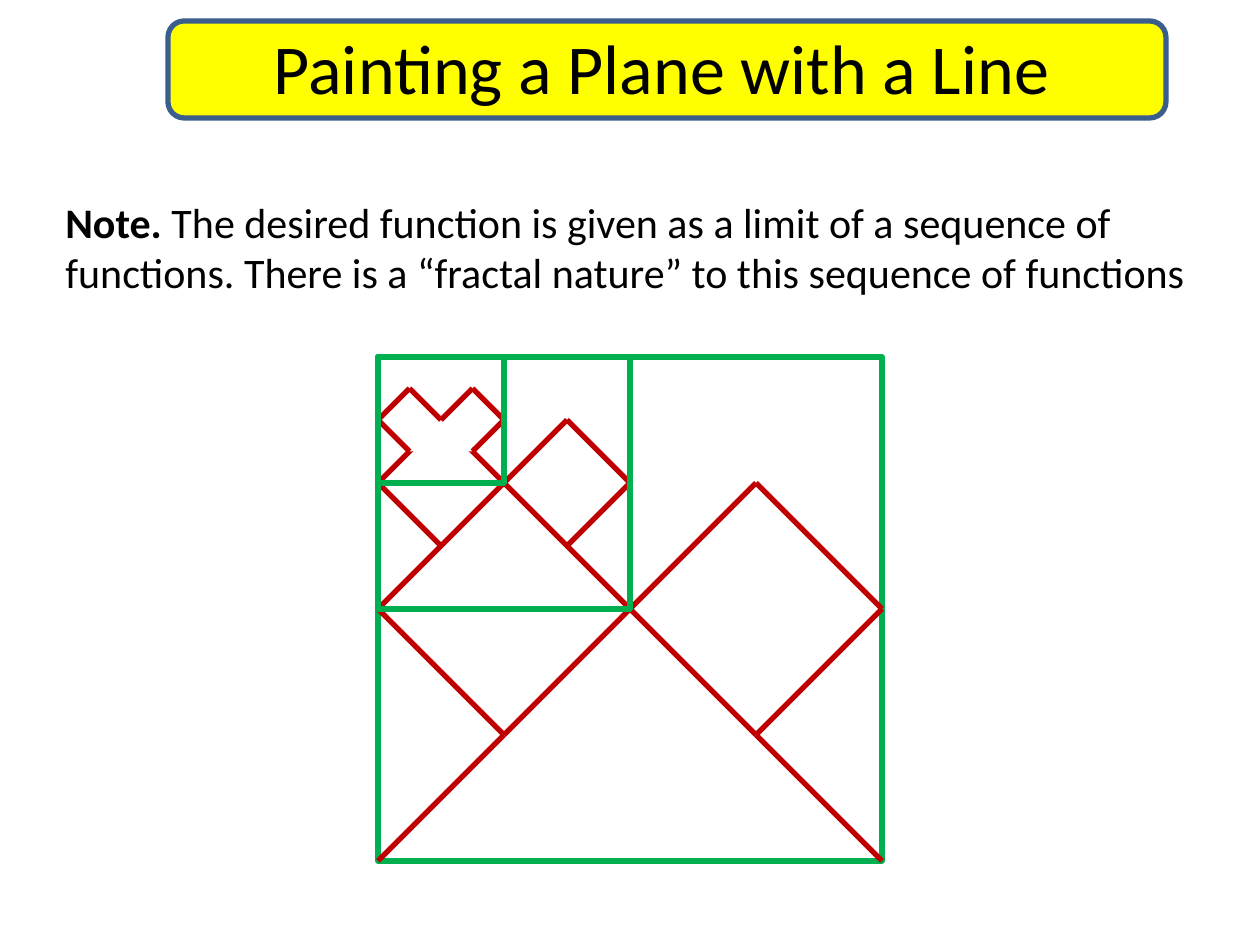
"""Build the slide on painting a plane with a line, with three nested curve levels."""
import pptx
import pptx.dml.color
import pptx.enum.shapes
import pptx.enum.text
import pptx.util
import lxml.etree

TITLE = [("Painting a Plane with a Line", False)]
NOTE = [
    ("Note. ", True),
    ("The desired function is given as a limit of a sequence of functions. "
     "There is a “fractal nature” to this sequence of functions", False),
]
CURVE = [
    ((0, 2), (1, 3)), ((0, 2), (1, 1)), ((1, 1), (2, 2)),
    ((2, 2), (3, 1)), ((3, 1), (4, 2)), ((4, 2), (3, 3)),
]
LEGS = [((0, 4), (1, 3)), ((1, 3), (2, 2)), ((2, 2), (3, 3)), ((3, 3), (4, 4))]
LEVELS = [(504, LEGS + CURVE), (252, CURVE), (126, CURVE)]
SIDE_SITES = {(0, 2): 1, (4, 2): 3}

SLIDE_SIZE = (1260, 945)
CORNER = (378, 357)
BANNER_BOX = (168, 21, 998, 97)
TITLE_BOX = (168, 18, 987, 97)
NOTE_BOX = (53, 190, 1197, 115)
THEME = {
    "font": "Calibri", "title_size": 40, "note_size": 24, "line_width": 3,
    "text": "000000", "square": "00B050", "curve": "C00000",
    "banner": "FFFF00", "banner_line": "3A5F8C", "cover": "FFFFFF",
}
SHAPES = pptx.enum.shapes.MSO_SHAPE
ALIGN = pptx.enum.text.PP_ALIGN


def px(value):
    return pptx.util.Emu(round(value * 914400 / 126))


def color(name):
    return pptx.dml.color.RGBColor.from_string(THEME[name])


def style_line(line, name):
    line.color.rgb = color(name)
    line.width = pptx.util.Pt(THEME["line_width"])


def add_box(slide, kind, box, fill=None, line=None):
    shape = slide.shapes.add_shape(kind, *map(px, box))
    shape.shadow.inherit = False
    if fill:
        shape.fill.solid()
        shape.fill.fore_color.rgb = color(fill)
    else:
        shape.fill.background()
    if line:
        style_line(shape.line, line)
    else:
        shape.line.fill.background()
    return shape


def write_text(shape, runs, box, size, align=ALIGN.LEFT, anchor=pptx.enum.text.MSO_ANCHOR.TOP):
    shape.left, shape.top, shape.width, shape.height = map(px, box)
    frame = shape.text_frame
    frame.word_wrap = True
    frame.auto_size = pptx.enum.text.MSO_AUTO_SIZE.NONE
    frame.vertical_anchor = anchor
    paragraph = frame.paragraphs[0]
    paragraph.alignment = align
    for text, bold in runs:
        run = paragraph.add_run()
        run.text = text
        run.font.name = THEME["font"]
        run.font.size = pptx.util.Pt(THEME[size])
        run.font.bold = bold
        run.font.color.rgb = color("text")


def add_segment(slide, square, unit, start, end):
    points = [px(CORNER[axis] + unit * point[axis]) for point in (start, end) for axis in (0, 1)]
    connector = slide.shapes.add_connector(pptx.enum.shapes.MSO_CONNECTOR.STRAIGHT, *points)
    style_line(connector.line, "curve")
    properties = connector.element.spPr
    lxml.etree.SubElement(properties, pptx.oxml.ns.qn("a:effectLst"))
    if start in SIDE_SITES:
        connector.begin_connect(square, SIDE_SITES[start])
    if end in SIDE_SITES:
        connector.end_connect(square, SIDE_SITES[end])


def add_level(slide, side, segments):
    square = add_box(slide, SHAPES.RECTANGLE, (*CORNER, side, side), line="square")
    for start, end in segments:
        add_segment(slide, square, side / 4, start, end)
    return square


def main():
    presentation = pptx.Presentation()
    presentation.slide_width, presentation.slide_height = map(px, SLIDE_SIZE)
    slide = presentation.slides.add_slide(presentation.slide_layouts[5])
    tree = slide.shapes.element

    outer, middle, inner = LEVELS
    add_level(slide, *outer)
    tree.append(add_level(slide, *middle).element)
    unit = inner[0] / 4
    cover_box = (CORNER[0] + unit, CORNER[1] + unit * 5 / 3, unit * 2, unit * 4 / 3)
    add_box(slide, SHAPES.RECTANGLE, cover_box, fill="cover")
    tree.append(add_level(slide, *inner).element)

    add_box(slide, SHAPES.ROUNDED_RECTANGLE, BANNER_BOX, fill="banner", line="banner_line")
    title = slide.shapes.title
    tree.append(title.element)
    write_text(title, TITLE, TITLE_BOX, "title_size", align=ALIGN.CENTER,
               anchor=pptx.enum.text.MSO_ANCHOR.MIDDLE)
    note = slide.shapes.add_textbox(*map(px, NOTE_BOX))
    write_text(note, NOTE, NOTE_BOX, "note_size")
    presentation.save("out.pptx")


if __name__ == "__main__":
    main()
